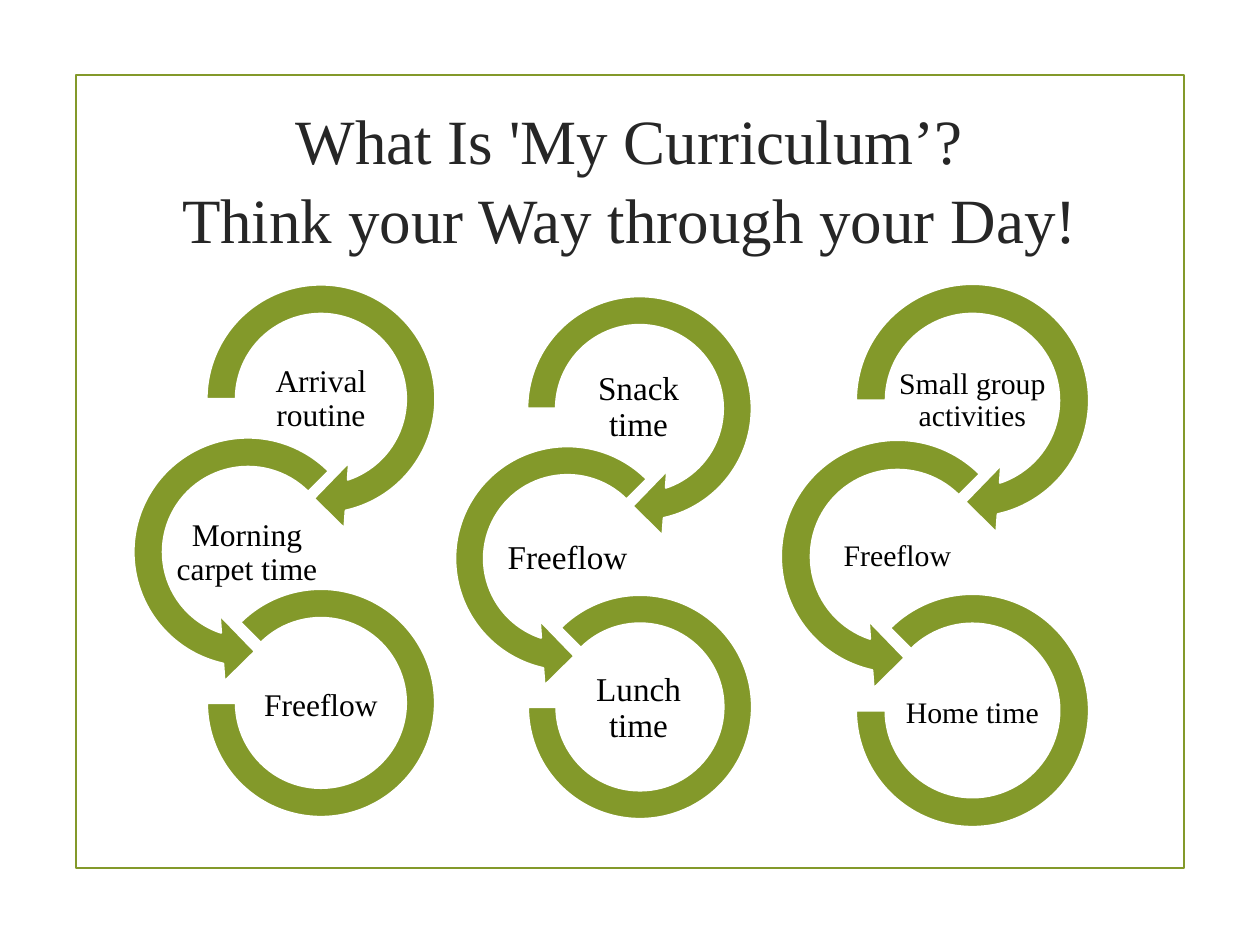
from pptx import Presentation, util as u
from pptx.dml.color import RGBColor
from pptx.enum import shapes, text

PX = 914400 / 126
COLORS = {"green": "83992A", "white": "FFFFFF", "title": "262626", "black": "000000"}
FONT = "Times New Roman"
MSO = shapes.MSO_SHAPE

# Links of a chain from top to bottom, in parts of the arrow size:
# preset, adjustments, left, top, size, label left, label top
LINKS = [
    (MSO.CIRCULAR_ARROW, (0.11, 11.42, 45, 108, 0.125), 0, 0, 1, 0.22, 0.36),
    (MSO.LEFT_CIRCULAR_ARROW, (0.11, 11.42, 63, 189, 0.125),
     -0.276, 0.575, 1, -0.055, 0.938),
    (MSO.BLOCK_ARC, (135, 108, 0.127), 0.071, 1.215, 0.859, 0.22, 1.515),
]
LABEL_W, LABEL_H = 0.556, 0.277

# Left, top, arrow size, text size, labels
CHAINS = [
    (188, 266, 266, 18, ("Arrival routine", "Morning carpet time", "Freeflow")),
    (509, 278, 261, 19, ("Snack time", "Freeflow", "Lunch time")),
    (837, 265, 271, 17, ("Small group activities", "Freeflow", "Home time")),
]


def emu(*lengths):
    return [u.Emu(round(n * PX)) for n in lengths]


class Deck:
    def __init__(self, prs):
        self.s = prs.slides.add_slide(prs.slide_layouts[6])

    def shape(self, preset, box, line, fill=None, adjustments=()):
        sp = self.s.shapes.add_shape(preset, *emu(*box))
        sp.shadow.inherit = False
        if fill:
            sp.fill.solid()
            sp.fill.fore_color.rgb = RGBColor.from_string(COLORS[fill])
        else:
            sp.fill.background()
        sp.line.color.rgb = RGBColor.from_string(COLORS[line])
        sp.line.width = u.Pt(1.25)
        for i, value in enumerate(adjustments):
            sp.adjustments[i] = value

    def text(self, words, box, size, color, spacing, inset):
        tf = self.s.shapes.add_textbox(*emu(*box)).text_frame
        tf.word_wrap = True
        tf.vertical_anchor = text.MSO_ANCHOR.MIDDLE
        tf.margin_left = tf.margin_right = tf.margin_top = tf.margin_bottom = emu(inset)[0]
        tf.text = words
        p = tf.paragraphs[0]
        p.alignment = text.PP_ALIGN.CENTER
        p.line_spacing = spacing
        for r in p.runs:
            r.font.name = FONT
            r.font.size = u.Pt(size)
            r.font.color.rgb = RGBColor.from_string(COLORS[color])

    def chain(self, left, top, d, size, labels):
        for link, label in zip(LINKS, labels):
            preset, adjustments, dx, dy, scale, label_x, label_y = link
            box = [round(n) for n in (left + dx * d, top + dy * d, scale * d, scale * d)]
            self.shape(preset, box, "white", "green", adjustments)
            box = [round(n) for n in (left + label_x * d, top + label_y * d,
                                      LABEL_W * d, LABEL_H * d)]
            self.text(label, box, size, "black", 0.9, 1)


def main():
    prs = Presentation()
    prs.slide_width, prs.slide_height = u.Inches(10), u.Inches(7.5)
    deck = Deck(prs)

    # Frame and title
    deck.shape(MSO.RECTANGLE, (76, 75, 1108, 793), "green")
    deck.text("What Is 'My Curriculum’?\vThink your Way through your Day!",
              (94, 98, 1071, 158), 36, "title", 1.05, 6)

    # Chains of the day
    for chain in CHAINS:
        deck.chain(*chain)

    prs.save("out.pptx")


if __name__ == "__main__":
    main()
